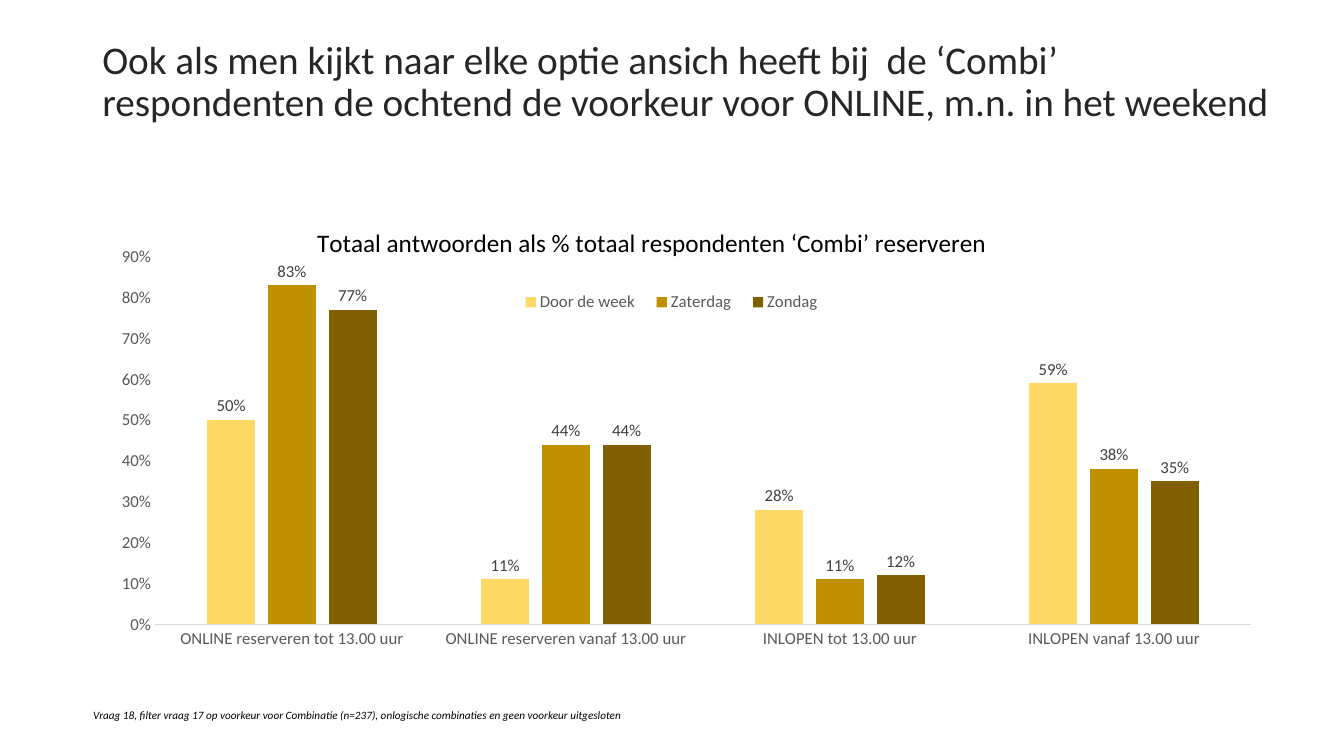
import pptx
import pptx.chart.data
import pptx.dml.color
import pptx.enum.chart
import pptx.enum.text
import pptx.oxml
import pptx.oxml.ns
import pptx.util

Pt = pptx.util.Pt
FONT = "Calibri"
COLORS = {
    "heading": "262626",
    "black": "000000",
    "axis_text": "595959",
    "axis_line": "D9D9D9",
    "value_label": "404040",
    "Door de week": "FFD966",
    "Zaterdag": "BF9000",
    "Zondag": "806000",
}


def style(font, size, color):
    font.name = FONT
    font.size = Pt(size)
    font.bold = False
    font.color.rgb = pptx.dml.color.RGBColor.from_string(COLORS[color])


def place(part, index, **fractions):
    """Give a chart part a manual layout, in fractions of the chart frame."""
    for layout in part.xpath("c:layout"):
        part.remove(layout)
    inner = '<c:layoutTarget val="inner"/>' if "w" in fractions and index == 0 else ""
    modes = "".join(f'<c:{key}Mode val="edge"/>' for key in "xy")
    sizes = "".join(f'<c:{key} val="{value}"/>' for key, value in fractions.items())
    part.insert(index, pptx.oxml.parse_xml(
        f'<c:layout {pptx.oxml.ns.nsdecls("c")}><c:manualLayout>'
        f"{inner}{modes}{sizes}</c:manualLayout></c:layout>"))


presentation = pptx.Presentation()
presentation.slide_width = Pt(960)
presentation.slide_height = Pt(540)
slide = presentation.slides.add_slide(presentation.slide_layouts[6])

# Heading
heading = slide.shapes.add_textbox(Pt(66), Pt(29), Pt(850.5), Pt(60.5)).text_frame
heading.word_wrap = True
heading.vertical_anchor = pptx.enum.text.MSO_ANCHOR.MIDDLE
heading.text = ("Ook als men kijkt naar elke optie ansich heeft bij  de ‘Combi’ "
                "respondenten de ochtend de voorkeur voor ONLINE, m.n. in het weekend")
heading.paragraphs[0].line_spacing = 0.9
style(heading.paragraphs[0].runs[0].font, 28, "heading")

# Footnote
footnote = slide.shapes.add_textbox(Pt(59.5), Pt(502.5), Pt(398), Pt(17)).text_frame
footnote.word_wrap = False
footnote.text = ("Vraag 18, filter vraag 17 op voorkeur voor Combinatie (n=237), "
                 "onlogische combinaties en geen voorkeur uitgesloten")
style(footnote.paragraphs[0].runs[0].font, 8, "black")
footnote.paragraphs[0].runs[0].font.italic = True

# Chart data
answers = pptx.chart.data.CategoryChartData(number_format="0%")
answers.categories = [
    "ONLINE reserveren tot 13.00 uur",
    "ONLINE reserveren vanaf 13.00 uur",
    "INLOPEN tot 13.00 uur",
    "INLOPEN vanaf 13.00 uur",
]
answers.add_series("Door de week", (0.50, 0.11, 0.28, 0.59))
answers.add_series("Zaterdag", (0.83, 0.44, 0.11, 0.38))
answers.add_series("Zondag", (0.77, 0.44, 0.12, 0.35))
chart = slide.shapes.add_chart(
    pptx.enum.chart.XL_CHART_TYPE.COLUMN_CLUSTERED,
    Pt(66), Pt(144), Pt(828), Pt(342.5), answers).chart
style(chart.font, 10, "black")

# Chart title and legend
chart.has_title = True
chart_title = chart.chart_title.text_frame
chart_title.text = "Totaal antwoorden als % totaal respondenten ‘Combi’ reserveren"
style(chart_title.paragraphs[0].runs[0].font, 18, "black")
chart.has_legend = True
chart.legend.position = pptx.enum.chart.XL_LEGEND_POSITION.TOP
chart.legend.include_in_layout = False
style(chart.legend.font, 12, "axis_text")

# Axes
for axis in (chart.category_axis, chart.value_axis):
    axis.major_tick_mark = axis.minor_tick_mark = pptx.enum.chart.XL_TICK_MARK.NONE
    axis.has_major_gridlines = False
    style(axis.tick_labels.font, 12, "axis_text")
category_line = chart.category_axis.format.line
category_line.width = Pt(0.75)
category_line.color.rgb = pptx.dml.color.RGBColor.from_string(COLORS["axis_line"])
chart.value_axis.format.line.fill.background()
chart.value_axis.minimum_scale = 0
chart.value_axis.maximum_scale = 0.9
chart.value_axis.major_unit = 0.1
chart.value_axis.tick_labels.number_format = "0%"
chart.value_axis.tick_labels.number_format_is_linked = False

# Columns
columns = chart.plots[0]
columns.vary_by_categories = False
columns.gap_width = 219
columns.overlap = -27
for day in columns.series:
    day.format.fill.solid()
    day.format.fill.fore_color.rgb = pptx.dml.color.RGBColor.from_string(COLORS[day.name])
    labels = day.data_labels
    labels.show_value = True
    labels.position = pptx.enum.chart.XL_LABEL_POSITION.OUTSIDE_END
    labels.number_format = "0%"
    labels.number_format_is_linked = False
    style(labels.font, 12, "value_label")

# Places of the chart parts
chart_xml = columns.series[0].format.fill and chart.element
plot_area, = chart_xml.xpath("c:chart/c:plotArea")
title_part, = chart_xml.xpath("c:chart/c:title")
legend_part, = chart_xml.xpath("c:chart/c:legend")
place(plot_area, 0, x=0.054, y=0.115, w=0.946, h=0.767)
place(title_part, 1, x=0.19, y=0.04)
place(legend_part, 1, x=0.36, y=0.18, w=0.28, h=0.06)

presentation.save("out.pptx")
